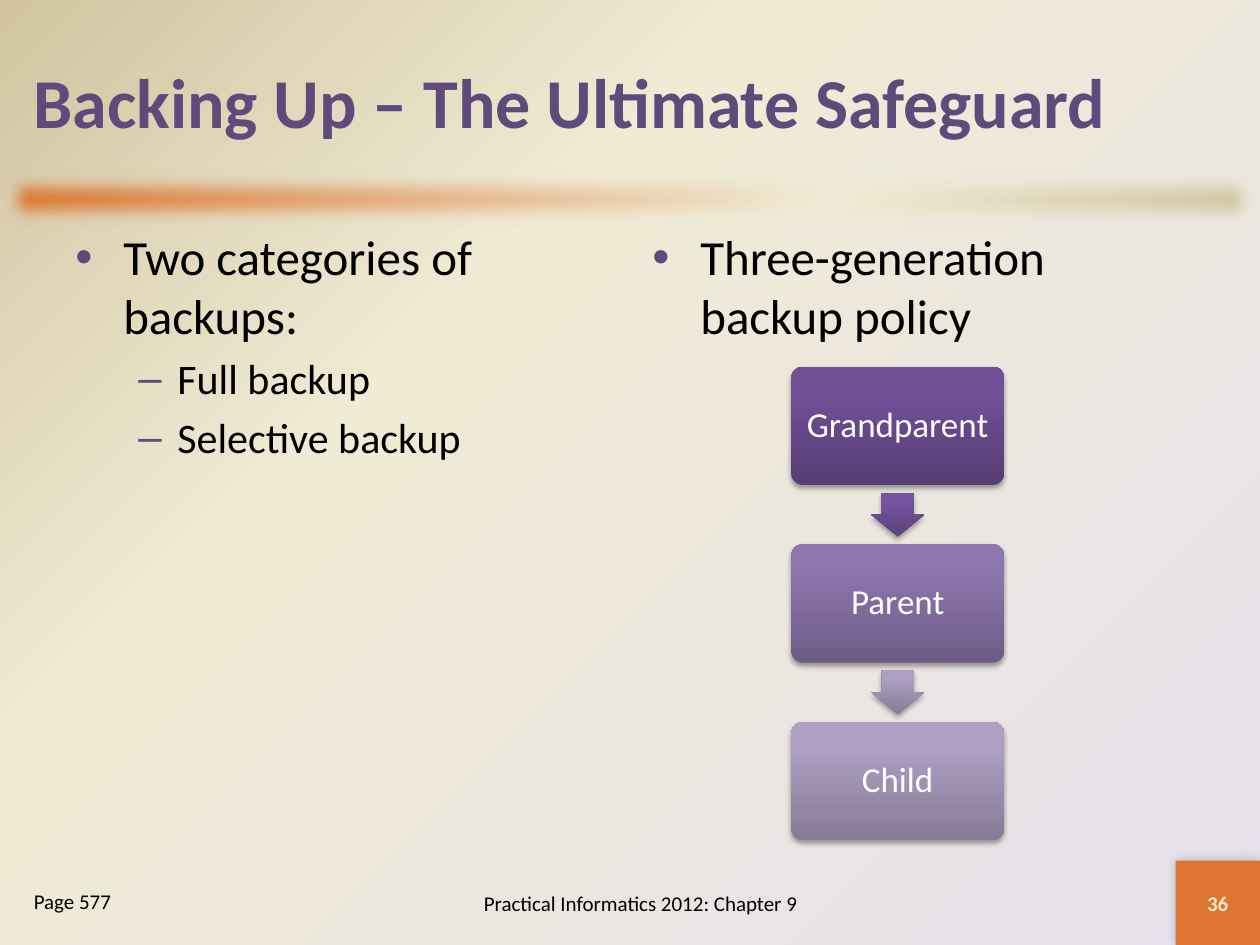
from dataclasses import dataclass

from pptx import Presentation
from pptx import oxml
from pptx import util as u
from pptx.dml.color import RGBColor
from pptx.enum import shapes, text
from pptx.oxml import ns


@dataclass(frozen=True)
class Theme:
    font: str = "Calibri"
    purple: str = "604A7B"
    orange: str = "DB7531"
    ink: str = "000000"
    white: str = "FFFFFF"
    cream: str = "EEEBCA"
    title: int = 40
    bullet: int = 28
    sub_bullet: int = 24
    label: int = 20
    footer: int = 12
    backdrop: tuple = ((0, "E6E0EC"), (65, "F0EBD5"), (100, "D1C39F"))
    rule: tuple = ((0, "DB7531"), (65, "F0EBD5"), (100, "D1C39F"))


THEME = Theme()
CENTER = text.PP_ALIGN.CENTER
MIDDLE = text.MSO_ANCHOR.MIDDLE

# Label, box gradient, gradient of the arrow that follows
GENERATIONS = (
    ("Grandparent", ("563D74", "705097", "704F99"), ("5B417A", "76549F", "7653A1")),
    ("Parent", ("6D5B86", "8E76AE", "8E75B0"), ("857A96", "AD9FC2", "AE9FC4")),
    ("Child", ("867B96", "AE9FC3", "AE9FC4"), None),
)


def xml(markup):
    """Parse one DrawingML element written with the a: prefix."""
    tag, rest = markup[1:].split(">", 1)
    closed = "/" if tag.endswith("/") else ""
    return oxml.parse_xml(f"<{tag.rstrip('/')} {ns.nsdecls('a')}{closed}>{rest}")


def set_gradient(fill, owner, stops, direction):
    fill.gradient()
    gradient = owner.xpath(".//a:gradFill")[0]
    for child in list(gradient):
        gradient.remove(child)
    gradient.set("rotWithShape", "0")
    marks = "".join(
        f'<a:gs pos="{pos * 1000}"><a:srgbClr val="{color}"/></a:gs>'
        for pos, color in stops
    )
    gradient.append(xml(f"<a:gsLst>{marks}</a:gsLst>"))
    gradient.append(xml(direction))


def linear(degrees):
    return f'<a:lin ang="{degrees * 60000}" scaled="0"/>'


def add_effect(shape, markup):
    shape.shadow.inherit = False
    shape.element.spPr.find(ns.qn("a:effectLst")).append(xml(markup))


def shadow(alpha, blur, distance, degrees):
    return (
        f'<a:outerShdw blurRad="{u.Pt(blur)}" dist="{u.Pt(distance)}" '
        f'dir="{degrees * 60000}" rotWithShape="0"><a:srgbClr val="000000">'
        f'<a:alpha val="{alpha * 1000}"/></a:srgbClr></a:outerShdw>'
    )


def add_block(parent, kind, box, effect, color=None, stops=None, degrees=270):
    block = parent.shapes.add_shape(kind, *map(u.Inches, box))
    if stops:
        set_gradient(block.fill, block.element.spPr, stops, linear(degrees))
    else:
        block.fill.solid()
        block.fill.fore_color.rgb = RGBColor.from_string(color)
    block.line.fill.background()
    add_effect(block, effect)
    return block


def style(paragraph, size, color=THEME.ink, bold=False, align=None):
    paragraph.alignment = align
    font = paragraph.font
    font.name, font.size, font.bold = THEME.font, u.Pt(size), bold
    font.color.rgb = RGBColor.from_string(color)


def add_frame(parent, box, anchor=text.MSO_ANCHOR.TOP):
    frame = parent.shapes.add_textbox(*map(u.Inches, box)).text_frame
    frame.word_wrap = True
    frame.vertical_anchor = anchor
    return frame


def add_line(parent, box, wording, size, anchor=MIDDLE, **look):
    frame = add_frame(parent, box, anchor)
    frame.text = wording
    style(frame.paragraphs[0], size, **look)
    return frame


def add_bullets(slide, box, items):
    """Each item is (level, wording)."""
    levels = (
        ("•", 0.38, 0.38, THEME.bullet),
        ("–", 0.81, 0.31, THEME.sub_bullet),
    )
    frame = add_frame(slide, box)
    for index, (level, wording) in enumerate(items):
        item = frame.add_paragraph() if index else frame.paragraphs[0]
        mark, margin, hang, size = levels[level]
        item.text, item.level = wording, level
        props = item._p.get_or_add_pPr()
        props.set("marL", str(u.Inches(margin)))
        props.set("indent", str(-u.Inches(hang)))
        for markup in (
            '<a:spcBef><a:spcPct val="20000"/></a:spcBef>',
            f'<a:buClr><a:srgbClr val="{THEME.purple}"/></a:buClr>',
            '<a:buFont typeface="Arial"/>',
            f'<a:buChar char="{mark}"/>',
        ):
            props.append(xml(markup))
        style(item, size)


def add_generations(slide):
    left, top, width, height, gap = 6.28, 2.91, 1.69, 0.94, 0.47
    arrow_length, arrow_width, inset = 0.35, 0.42, 0.03
    soft = shadow(35, 3.1, 1.8, 90)
    positions = (0, 80, 100)
    chain = slide.shapes.add_group_shape()
    for index, (name, box_colors, arrow_colors) in enumerate(GENERATIONS):
        y = top + index * (height + gap)
        box = add_block(
            chain, shapes.MSO_SHAPE.ROUNDED_RECTANGLE, (left, y, width, height),
            soft, stops=tuple(zip(positions, box_colors)),
        )
        box.adjustments[0] = 0.1
        label = add_line(
            chain,
            (left + inset, y + inset, width - 2 * inset, height - 2 * inset),
            name, THEME.label, color=THEME.white, align=CENTER,
        )
        label.margin_left = label.margin_right = u.Inches(0.08)
        label.margin_top = label.margin_bottom = u.Inches(0.08)
        label.paragraphs[0].line_spacing = 0.9
        if arrow_colors:
            arrow = add_block(
                chain, shapes.MSO_SHAPE.RIGHT_ARROW,
                (left + (width - arrow_length) / 2,
                 y + height + (gap - arrow_width) / 2,
                 arrow_length, arrow_width),
                soft, stops=tuple(zip(positions, arrow_colors)),
            )
            arrow.rotation = 90
            arrow.adjustments[0], arrow.adjustments[1] = 0.6, 0.5


def main():
    deck = Presentation()
    deck.slide_width, deck.slide_height = u.Inches(10), u.Inches(7.5)
    slide = deck.slides.add_slide(deck.slide_layouts[6])

    # Backdrop, blurred rule and page number square
    set_gradient(
        slide.background.fill, slide.element, THEME.backdrop,
        '<a:path path="circle"><a:fillToRect l="100000" t="100000"/></a:path>',
    )
    rectangle = shapes.MSO_SHAPE.RECTANGLE
    add_block(slide, rectangle, (0, 1.33, 10, 0.5),
              f'<a:softEdge rad="{u.Pt(10)}"/>', stops=THEME.rule, degrees=45)
    corner = (9.33, 6.83, 0.67, 0.67)
    add_block(slide, rectangle, corner, shadow(20, 6, 0, 225), color=THEME.orange)

    # Title and the two columns
    add_line(slide, (0.17, 0.17, 9.67, 1.25), "Backing Up – The Ultimate Safeguard",
             THEME.title, color=THEME.purple, bold=True)
    add_bullets(slide, (0.5, 1.75, 4.42, 4.95), (
        (0, "Two categories of backups:"),
        (1, "Full backup"),
        (1, "Selective backup"),
    ))
    add_bullets(slide, (5.08, 1.75, 4.42, 4.95),
                ((0, "Three-generation backup policy"),))
    add_generations(slide)

    # Footer
    add_line(slide, (3, 6.83, 4.17, 0.67), "Practical Informatics 2012: Chapter 9",
             THEME.footer, align=CENTER)
    add_line(slide, corner, "36", THEME.footer, color=THEME.cream, bold=True,
             align=CENTER)
    add_line(slide, (0.17, 7, 1.83, 0.5), "Page 577", THEME.footer,
             anchor=text.MSO_ANCHOR.TOP)

    deck.save("out.pptx")


if __name__ == "__main__":
    main()
